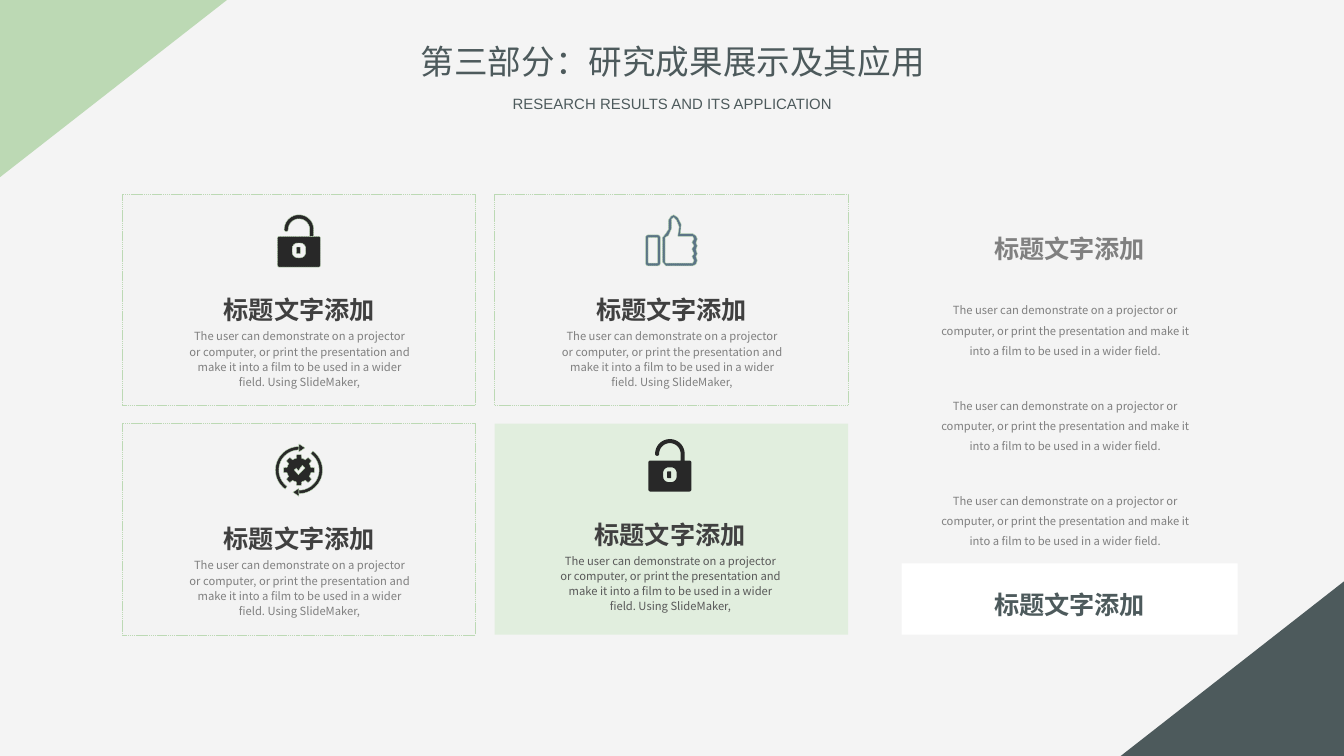
from dataclasses import dataclass
from math import cos, radians, sin

from lxml.etree import SubElement
from pptx import Presentation
from pptx.dml.color import RGBColor
from pptx.enum.dml import MSO_LINE
from pptx.enum.shapes import MSO_SHAPE
from pptx.enum.text import MSO_ANCHOR, MSO_AUTO_SIZE, PP_ALIGN
from pptx.oxml.ns import qn
from pptx.util import Cm, Pt


@dataclass(frozen=True)
class Theme:
    """Colours, fonts and type sizes of the deck."""
    page: str = "F4F4F4"
    leaf: str = "BCD9B4"
    pale: str = "E1EEDE"
    card: str = "F2F2F2"
    slate: str = "4D5A5C"
    steel: str = "5B7486"
    ink: str = "282828"
    dark: str = "404040"
    mid: str = "595959"
    grey: str = "808080"
    white: str = "FFFFFF"
    sans: str = "Noto Sans CJK SC"
    latin: str = "Arial"
    title: float = 18
    sub: float = 8
    head: float = 13.5
    body: float = 6


@dataclass(frozen=True)
class Box:
    """A rectangle in centimetres."""
    left: float
    top: float
    width: float
    height: float

    def inner(self, left, top, width, height):
        """Return a box placed relative to this one."""
        return Box(self.left + left, self.top + top, width, height)

    def emu(self):
        """Return the four lengths for python-pptx."""
        return Cm(self.left), Cm(self.top), Cm(self.width), Cm(self.height)


THEME = Theme()
HEAD = "标题文字添加"
LEAD = ("The user can demonstrate on a projector or computer, or print the "
        "presentation and make it into a film to be used in a wider field.")
NOTE = LEAD + " Using SlideMaker,"
UNIT = 0.0254


def paint(shape, color, alpha=None, edge=False):
    """Fill a shape and give it a dashed edge or none."""
    shape.shadow.inherit = False
    shape.fill.solid()
    shape.fill.fore_color.rgb = RGBColor.from_string(color)
    if alpha:
        tone = shape.fill._xPr.find(qn("a:solidFill"))[0]
        SubElement(tone, qn("a:alpha"), val=str(alpha * 1000))
    if edge:
        shape.line.color.rgb = RGBColor.from_string(THEME.leaf)
        shape.line.width = Pt(0.25)
        shape.line.dash_style = MSO_LINE.SQUARE_DOT
    else:
        shape.line.fill.background()


def write(shape, text, size, color, space=1.0, bold=False, font=THEME.sans, wrap=True):
    """Set one centred paragraph in a shape."""
    frame = shape.text_frame
    frame.text = text
    frame.word_wrap = wrap
    frame.auto_size = MSO_AUTO_SIZE.NONE
    frame.vertical_anchor = MSO_ANCHOR.TOP
    para = frame.paragraphs[0]
    para.alignment = PP_ALIGN.CENTER
    para.line_spacing = space
    para.space_before = Pt(0)
    para.font.size = Pt(size)
    para.font.bold = bold
    para.font.color.rgb = RGBColor.from_string(color)
    para.font.name = font
    SubElement(para._p.pPr.find(qn("a:defRPr")), qn("a:ea"), typeface=font)


def label(slide, box, *args, **kinds):
    """Add a text box with one paragraph."""
    write(slide.shapes.add_textbox(*box.emu()), *args, **kinds)


def block(slide, box, color, **kinds):
    """Add a plain rectangle."""
    shape = slide.shapes.add_shape(MSO_SHAPE.RECTANGLE, *box.emu())
    paint(shape, color, **kinds)
    return shape


def corner(slide, box, spin, color):
    """Add a right triangle that covers the box once turned."""
    shift = (box.width - box.height) / 2
    frame = box.inner(shift, -shift, box.height, box.width)
    shape = slide.shapes.add_shape(MSO_SHAPE.RIGHT_TRIANGLE, *frame.emu())
    shape.rotation = spin
    paint(shape, color)


def arc(x, y, size, start, end, steps=24):
    """Return points along a circular arc."""
    turns = [radians(start + (end - start) * i / steps) for i in range(steps + 1)]
    return [(x + size * cos(t), y + size * sin(t)) for t in turns]


def pill(left, top, right, low, size):
    """Return a rectangle with round corners."""
    spots = [(right - size, low - size), (left + size, low - size),
             (left + size, top + size), (right - size, top + size)]
    return [p for i, (x, y) in enumerate(spots)
            for p in arc(x, y, size, 90 * i, 90 * i + 90, 6)]


def lock():
    """Return the outlines of an open padlock."""
    bow = ([(27, 16)] + arc(16, 11, 11, 0, -180) + arc(6.5, 11, 1.5, 180, 0, 8)
           + arc(16, 11, 8, -180, 0) + [(24, 16)])
    return [pill(0, 16, 32, 39, 1.5), bow, pill(11, 21, 21, 32, 4), pill(14, 24, 17, 29, 0.5)]


def thumb():
    """Return the outlines of a raised thumb."""
    outer = [(21, 0), (24, 2), (26.5, 7), (26, 14), (35, 14), (37.5, 15.5),
             (38.5, 18), (37.5, 21), (38.5, 23), (37.5, 26), (38.5, 29),
             (37.5, 31), (38.5, 34), (37.5, 37), (35, 38), (15, 38), (12.5, 35),
             (12.5, 17), (15, 14), (17, 11), (17, 4), (19, 1)]
    inner = [(21, 2), (23, 4), (25, 9), (24, 16), (35, 16), (36, 18), (34.5, 20.5),
             (36, 23), (34.5, 25.5), (36, 29), (34.5, 31), (36, 34), (35, 36),
             (15, 36), (14.5, 35), (14.5, 17), (17, 15.5), (19.5, 10), (19.5, 3)]
    return [pill(0, 15, 11, 38, 2), pill(2, 17, 9, 36, 0.5), outer, inner]


def gear():
    """Return the outlines of a checked gear between two arrows."""
    x, y = 17.5, 19.5
    wheel = [p for i in range(8) for size, low, high in ((11.5, -9, 9), (9, 13, 32))
             for p in arc(x, y, size, 45 * i + low, 45 * i + high, 2)]
    tick = [(20, 16), (17, 20), (15.5, 18), (14, 19.5), (17, 23), (22, 18)]
    sweep = arc(x, y, 17.5, -90, -234) + arc(x, y, 15, -234, -90)
    tip = [(17.5, 0), (22, 3), (17.5, 6)]
    pair = [sweep, tip]
    return [wheel, tick] + pair + [[(2 * x - a, 2 * y - b) for a, b in p] for p in pair]


def icon(slide, box, paths, color, edge):
    """Draw outlines centred across the top of a box."""
    wide = max(x for path in paths for x, _ in path)
    paths = [[(Cm(x * UNIT), Cm(y * UNIT)) for x, y in path] for path in paths]
    pen = slide.shapes.build_freeform(*paths[0][0])
    for i, path in enumerate(paths):
        if i:
            pen.move_to(*path[0])
        pen.add_line_segments(path[1:], close=True)
    left = box.left + (box.width - wide * UNIT) / 2
    paint(pen.convert_to_shape(Cm(left), Cm(box.top)), color, edge=edge)


def card(slide, box, paths, color, key=False):
    """Place a card with icon, heading and note."""
    if key:
        block(slide, box, THEME.pale)
    else:
        block(slide, box, THEME.card, alpha=40, edge=True)
    lift, move = (0.09, 0.03) if key else (0, 0)
    icon(slide, box.inner(-move, 0.38 - lift, box.width, 1), paths, color, not key)
    label(slide, box.inner(0.74 - move, 1.65 - lift, 5.21, 0.91),
          HEAD, THEME.head, THEME.dark, 1.2, True)
    label(slide, box.inner(0.99 - move, 2.39 - lift, 4.72, 1.4),
          NOTE, THEME.body, THEME.mid if key else THEME.grey, 1.14)


def grid(slide, box):
    """Place four cards in two rows."""
    wide, high, gap = 6.68, 3.99, 0.34
    marks = [(lock(), THEME.ink), (thumb(), THEME.steel),
             (gear(), THEME.ink), (lock(), THEME.ink)]
    for i, (paths, color) in enumerate(marks):
        row, col = divmod(i, 2)
        spot = box.inner(col * (box.width - wide), row * (wide - wide + high + gap), wide, high)
        card(slide, spot, paths, color, key=i == 3)


def aside(slide, box):
    """Place the side column of notes and its closing panel."""
    label(slide, box.inner(0.81, 0, 4.72, 0.91), HEAD, THEME.head, THEME.grey, 1.2, True)
    for i in range(3):
        label(slide, box.inner(0.32, 1.32 + 1.8 * i, 5.54, 1.37),
              LEAD, THEME.body, THEME.grey, 1.5)
    block(slide, box.inner(0, 6.48, box.width, 1.35), THEME.white)
    panel = block(slide, box.inner(0.81, 6.73, 4.72, 0.91), THEME.white)
    write(panel, HEAD, THEME.head, THEME.slate, 1.2, True)


def header(slide, box):
    """Place the title and its subtitle."""
    title, sub = slide.shapes.title, slide.placeholders[1]
    spots = (box.inner(0, 0, box.width, 1.02), box.inner(1.72, 1.02, 6.68, 0.61))
    for shape, spot in zip((title, sub), spots):
        shape.left, shape.top, shape.width, shape.height = spot.emu()
    write(title, "第三部分：研究成果展示及其应用", THEME.title, THEME.slate, wrap=False)
    write(sub, "RESEARCH RESULTS AND ITS APPLICATION", THEME.sub, THEME.slate,
          font=THEME.latin, wrap=False)


def main():
    """Build and save the deck."""
    deck = Presentation()
    deck.slide_width, deck.slide_height = Cm(25.4), Cm(14.29)
    slide = deck.slides.add_slide(deck.slide_layouts[0])
    slide.background.fill.solid()
    slide.background.fill.fore_color.rgb = RGBColor.from_string(THEME.page)
    corner(slide, Box(0, 0, 4.29, 3.35), 90, THEME.leaf)
    corner(slide, Box(21.18, 10.99, 4.22, 3.3), 270, THEME.slate)
    header(slide, Box(7.65, 0.64, 10.13, 1.63))
    grid(slide, Box(2.31, 3.68, 13.72, 8.31))
    aside(slide, Box(17.04, 4.17, 6.35, 7.83))
    deck.save("out.pptx")


if __name__ == "__main__":
    main()
